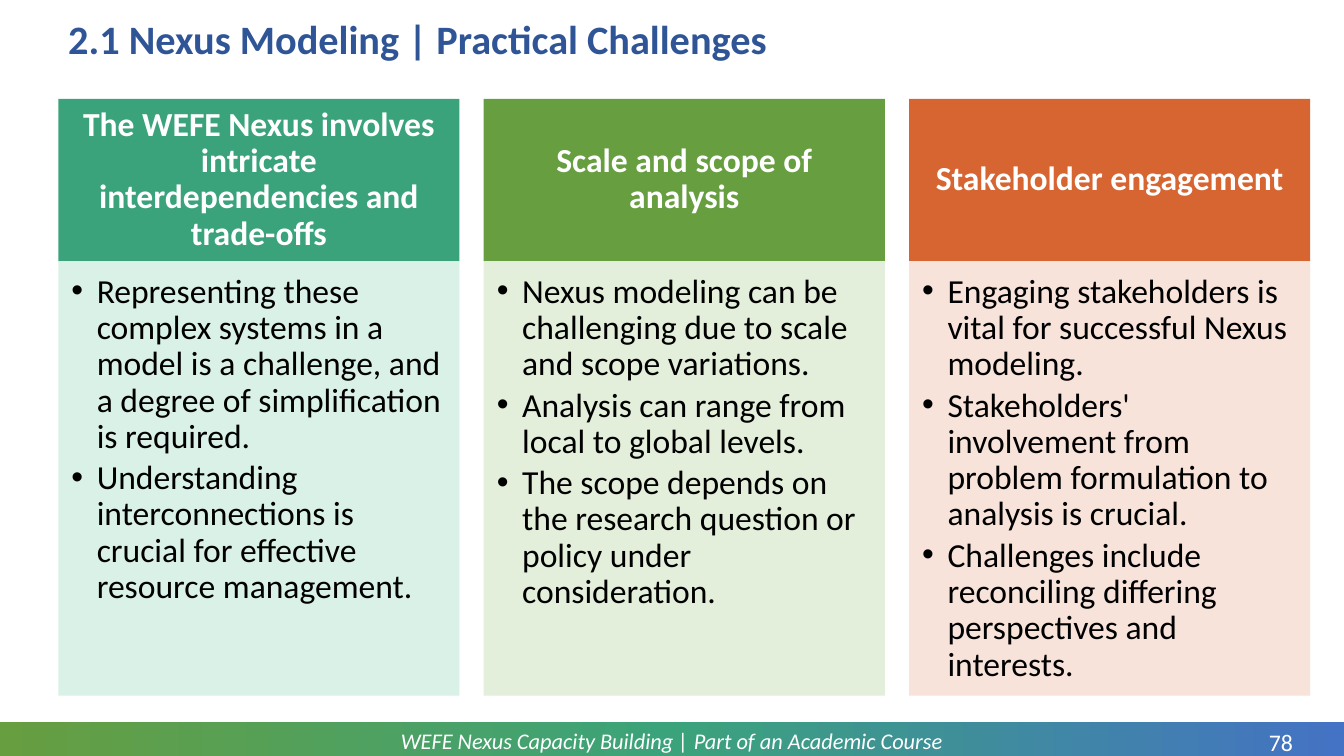
from copy import deepcopy

from lxml import etree
from pptx import Presentation
from pptx import util as u
from pptx.dml import color
from pptx.enum import shapes, text
from pptx.oxml import ns

TITLE = "2.1 Nexus Modeling | Practical Challenges"
FOOTER = "WEFE Nexus Capacity Building | Part of an Academic Course"
PAGE_NUMBER = "78"
BAR_STOPS = [(0, "669E40"), (50, "3BA37B"), (100, "4472C4")]
COLUMNS = [
    ("The WEFE Nexus involves intricate interdependencies and trade-offs", "3BA37B", "D5F0E5", [
        "Representing these complex systems in a model is a challenge, and a degree of simplification is required.",
        "Understanding interconnections is crucial for effective resource management.",
    ]),
    ("Scale and scope of analysis", "669E40", "E0EED6", [
        "Nexus modeling can be challenging due to scale and scope variations.",
        "Analysis can range from local to global levels.",
        "The scope depends on the research question or policy under consideration.",
    ]),
    ("Stakeholder engagement", "D66532", "F7E0D6", [
        "Engaging stakeholders is vital for successful Nexus modeling.",
        "Stakeholders' involvement from problem formulation to analysis is crucial.",
        "Challenges include reconciling differing perspectives and interests.",
    ]),
]

SLIDE_WIDTH, SLIDE_HEIGHT = 33.87, 19.05
LEFT, TOP, COLUMN_WIDTH, COLUMN_STEP = 1.47, 2.49, 10.11, 10.72
HEAD_HEIGHT, BODY_HEIGHT = 4.09, 10.95
BAR_TOP = 18.19
BULLET_INDENT = 0.64
BODY_ALPHA = 90
CENTER, LEFT_ALIGN = text.PP_ALIGN.CENTER, text.PP_ALIGN.LEFT
MIDDLE, UPPER = text.MSO_ANCHOR.MIDDLE, text.MSO_ANCHOR.TOP

HEAD_FONT = {"size": 24, "color": "FFFFFF", "bold": True}
BODY_FONT = {"size": 24, "color": "000000"}
HEAD_PARA = {"alignment": CENTER, "line_spacing": 0.9}
BODY_PARA = {"alignment": LEFT_ALIGN, "line_spacing": 0.9, "space_after": u.Pt(3.6)}


def rgb(value):
    return color.RGBColor.from_string(value)


def set_all(target, values):
    for name, value in values.items():
        setattr(target, name, value)


def write(box, lines, font, para_format, insets=(0.25, 0.13, 0.25, 0.13), anchor=MIDDLE, bullets=False):
    frame = box.text_frame
    margins = ("margin_left", "margin_top", "margin_right", "margin_bottom")
    set_all(frame, dict(zip(margins, map(u.Cm, insets))))
    set_all(frame, {"word_wrap": True, "vertical_anchor": anchor})
    for index, line in enumerate(lines):
        para = frame.add_paragraph() if index else frame.paragraphs[0]
        set_all(para, para_format)
        span = para.add_run()
        span.text = line
        looks = {"name": "Calibri", **font, "size": u.Pt(font["size"])}
        span.font.color.rgb = rgb(looks.pop("color"))
        set_all(span.font, looks)
        if bullets:
            props = para._p.get_or_add_pPr()
            props.set("marL", str(u.Cm(BULLET_INDENT)))
            props.set("indent", str(-u.Cm(BULLET_INDENT)))
            etree.SubElement(props, ns.qn("a:buFont")).set("typeface", "Arial")
            etree.SubElement(props, ns.qn("a:buChar")).set("char", "•")


def add_text(page, place, *args, **options):
    write(page.shapes.add_textbox(*map(u.Cm, place)), *args, **options)


def add_block(page, place, fill=None):
    block = page.shapes.add_shape(shapes.MSO_SHAPE.RECTANGLE, *map(u.Cm, place))
    block.shadow.inherit = False
    block.line.fill.background()
    if fill:
        block.fill.solid()
        block.fill.fore_color.rgb = rgb(fill)
    return block


def add_bar(page):
    bar = add_block(page, (0, BAR_TOP, SLIDE_WIDTH, SLIDE_HEIGHT - BAR_TOP))
    bar.fill.gradient()
    bar.fill.gradient_angle = 0
    stop_list = bar._element.spPr.find(".//" + ns.qn("a:gsLst"))
    stop_list.append(deepcopy(stop_list[-1]))
    for stop, (position, value) in zip(bar.fill.gradient_stops, BAR_STOPS):
        stop.position = position / 100
        stop.color.rgb = rgb(value)


def add_column(page, index, heading, head_fill, body_fill, points):
    left = LEFT + index * COLUMN_STEP
    head = add_block(page, (left, TOP, COLUMN_WIDTH, HEAD_HEIGHT), head_fill)
    write(head, [heading], HEAD_FONT, HEAD_PARA, (0.43, 0.25, 0.43, 0.25))
    body = add_block(page, (left, TOP + HEAD_HEIGHT, COLUMN_WIDTH, BODY_HEIGHT), body_fill)
    tint = body._element.spPr.find(".//" + ns.qn("a:srgbClr"))
    etree.SubElement(tint, ns.qn("a:alpha")).set("val", str(BODY_ALPHA * 1000))
    write(body, points, BODY_FONT, BODY_PARA, (0.33, 0.33, 0.43, 0.48), UPPER, True)


def main():
    deck = Presentation()
    set_all(deck, {"slide_width": u.Cm(SLIDE_WIDTH), "slide_height": u.Cm(SLIDE_HEIGHT)})
    page = deck.slides.add_slide(deck.slide_layouts[6])
    add_bar(page)
    add_text(page, (2.34, 18.21, 29.18, 0.91), [FOOTER],
             {"size": 16, "color": "FFFFFF", "italic": True},
             {"alignment": CENTER, "space_after": u.Pt(8)})
    add_text(page, (31.52, 18.34, 1.52, 0.74), [PAGE_NUMBER],
             {"size": 17, "color": "FFFFFF"}, {"alignment": CENTER}, (0, 0, 0, 0), UPPER)
    add_text(page, (LEFT, 0.33, 30.86, 1.42), [TITLE],
             {"size": 28.8, "color": "2F5597", "bold": True},
             {"alignment": LEFT_ALIGN, "line_spacing": 0.9})
    for index, column in enumerate(COLUMNS):
        add_column(page, index, *column)
    deck.save("out.pptx")


if __name__ == "__main__":
    main()
